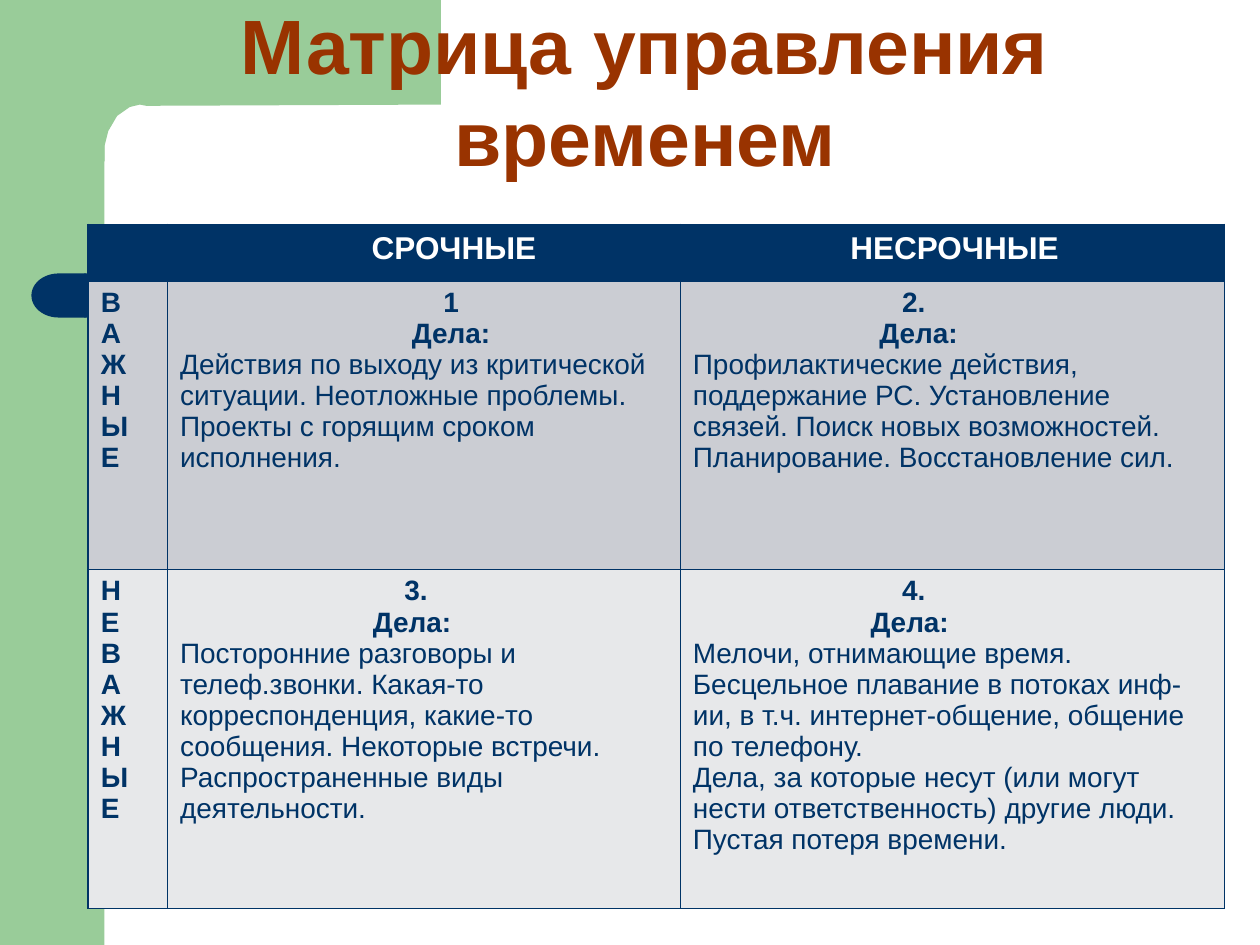
from lxml.etree import SubElement
from pptx import Presentation
from pptx.dml.color import RGBColor
from pptx.enum.shapes import MSO_SHAPE
from pptx.enum.text import MSO_ANCHOR, PP_ALIGN
from pptx.oxml.ns import qn
from pptx.util import Inches, Pt

GREEN, NAVY, RUST, WHITE = "99CC99", "003366", "993300", "FFFFFF"
ROW_FILLS = [NAVY, "CBCDD3", "E7E8EA"]
COLUMN_WIDTHS = [0.63, 4.07, 4.32]
ROW_HEIGHTS = [0.45, 2.29, 2.69]

TITLE = "Матрица управления временем"
# Headings are (text, indent in inches); None as indent means centred
HEADER = [[], [("СРОЧНЫЕ", 1.52)], [("НЕСРОЧНЫЕ", 1.25)]]
QUADRANTS = [
    ("ВАЖНЫЕ", [
        ([("1", None), ("Дела:", None)],
         ["Действия по выходу из критической ситуации. Неотложные проблемы. "
          "Проекты с горящим сроком исполнения."]),
        ([("2.", 1.66), ("Дела:", 1.48)],
         ["Профилактические действия, поддержание РС. Установление связей. "
          "Поиск новых возможностей. Планирование. Восстановление сил."]),
    ]),
    ("НЕВАЖНЫЕ", [
        ([("3.", 1.78), ("Дела:", 1.53)],
         ["Посторонние разговоры и телеф.звонки. Какая-то корреспонденция, "
          "какие-то сообщения. Некоторые встречи. Распространенные виды "
          "деятельности."]),
        ([("4.", 1.66), ("Дела:", 1.41)],
         ["Мелочи, отнимающие время.",
          "Бесцельное плавание в потоках инф-ии, в т.ч. интернет-общение, "
          "общение по телефону.",
          "Дела, за которые несут (или могут нести ответственность) другие люди.",
          "Пустая потеря времени."]),
    ]),
]
CENTRED_SHIFT = 0.43

# Corner outline in hundredths of an inch
CORNER = [(350, 0), (350, 83), (116, 84), (111, 83), (103, 85), (93, 92),
          (86, 104), (83, 116), (83, 128), (50, 128), (50, 0)]


def rgb(colour):
    return RGBColor.from_string(colour)


def paint(shape, colour):
    shape.shadow.inherit = False
    shape.fill.solid()
    shape.fill.fore_color.rgb = rgb(colour)
    shape.line.fill.background()


def add_block(kind, left, top, width, height, colour):
    block = slide.shapes.add_shape(
        kind, Inches(left), Inches(top), Inches(width), Inches(height))
    paint(block, colour)
    return block


def style(paragraph, text, size, colour, bold):
    paragraph.text = text
    font = paragraph.font
    font.name, font.size, font.bold = "Arial", Pt(size), bold
    font.color.rgb = rgb(colour)


def add_borders(cell):
    properties = cell._tc.get_or_add_tcPr()
    for place, side in enumerate(("a:lnL", "a:lnR", "a:lnT", "a:lnB")):
        border = properties.makeelement(qn(side), {"w": str(Pt(1))})
        fill = SubElement(border, qn("a:solidFill"))
        SubElement(fill, qn("a:srgbClr"), val=NAVY)
        properties.insert(place, border)


def fill_cell(cell, lines, size, colour):
    """Write (text, bold, indent) lines into a cell."""
    for number, (text, bold, indent) in enumerate(lines):
        frame = cell.text_frame
        paragraph = frame.add_paragraph() if number else frame.paragraphs[0]
        style(paragraph, text, size, colour, bold)
        centred = indent is None
        paragraph.alignment = PP_ALIGN.CENTER if centred else PP_ALIGN.LEFT
        margin = CENTRED_SHIFT if centred else indent
        if margin:
            paragraph._p.get_or_add_pPr().set("marL", str(Inches(margin)))


def headings(pairs):
    return [(text, True, indent) for text, indent in pairs]


presentation = Presentation()
presentation.slide_width, presentation.slide_height = Inches(10), Inches(7.5)
slide = presentation.slides.add_slide(presentation.slide_layouts[6])

# Green side band with its rounded inner corner
add_block(MSO_SHAPE.RECTANGLE, 0, 0, 0.83, 7.5, GREEN)
outline = slide.shapes.build_freeform(*CORNER[0], scale=Inches(0.01))
outline.add_line_segments(CORNER[1:], close=True)
paint(outline.convert_to_shape(), GREEN)

# Navy bar with a round left end
bar = add_block(MSO_SHAPE.ROUNDED_RECTANGLE, 0.67, 2.17, 7.67, 0.35, NAVY)
bar.adjustments[0] = 0
bar_end = add_block(MSO_SHAPE.FLOWCHART_DELAY, 0.25, 2.17, 0.43, 0.35, NAVY)
bar_end._element.spPr.get_or_add_xfrm().set("flipH", "1")

# Title
title = slide.shapes.add_textbox(Inches(0.62), Inches(-0.19), Inches(9), Inches(1.8))
title.text_frame.word_wrap = True
title.text_frame.vertical_anchor = MSO_ANCHOR.MIDDLE
style(title.text_frame.paragraphs[0], TITLE, 44, RUST, True)
title.text_frame.paragraphs[0].alignment = PP_ALIGN.CENTER

# Matrix: header row, then one row per importance level
rows = [[headings(pairs) for pairs in HEADER]]
for label, quadrants in QUADRANTS:
    rows.append([[(letter, True, 0) for letter in label]] + [
        headings(heads) + [(text, False, 0) for text in tasks]
        for heads, tasks in quadrants])

matrix = slide.shapes.add_table(
    len(rows), len(COLUMN_WIDTHS), Inches(0.7), Inches(1.78),
    Inches(sum(COLUMN_WIDTHS)), Inches(sum(ROW_HEIGHTS))).table
for column, width in zip(matrix.columns, COLUMN_WIDTHS):
    column.width = Inches(width)
for r, (cells, height, row_fill) in enumerate(zip(rows, ROW_HEIGHTS, ROW_FILLS)):
    matrix.rows[r].height = Inches(height)
    size, colour = (16, NAVY) if r else (18, WHITE)
    for c, lines in enumerate(cells):
        cell = matrix.cell(r, c)
        cell.fill.solid()
        cell.fill.fore_color.rgb = rgb(row_fill)
        add_borders(cell)
        fill_cell(cell, lines, size, colour)

presentation.save("out.pptx")
